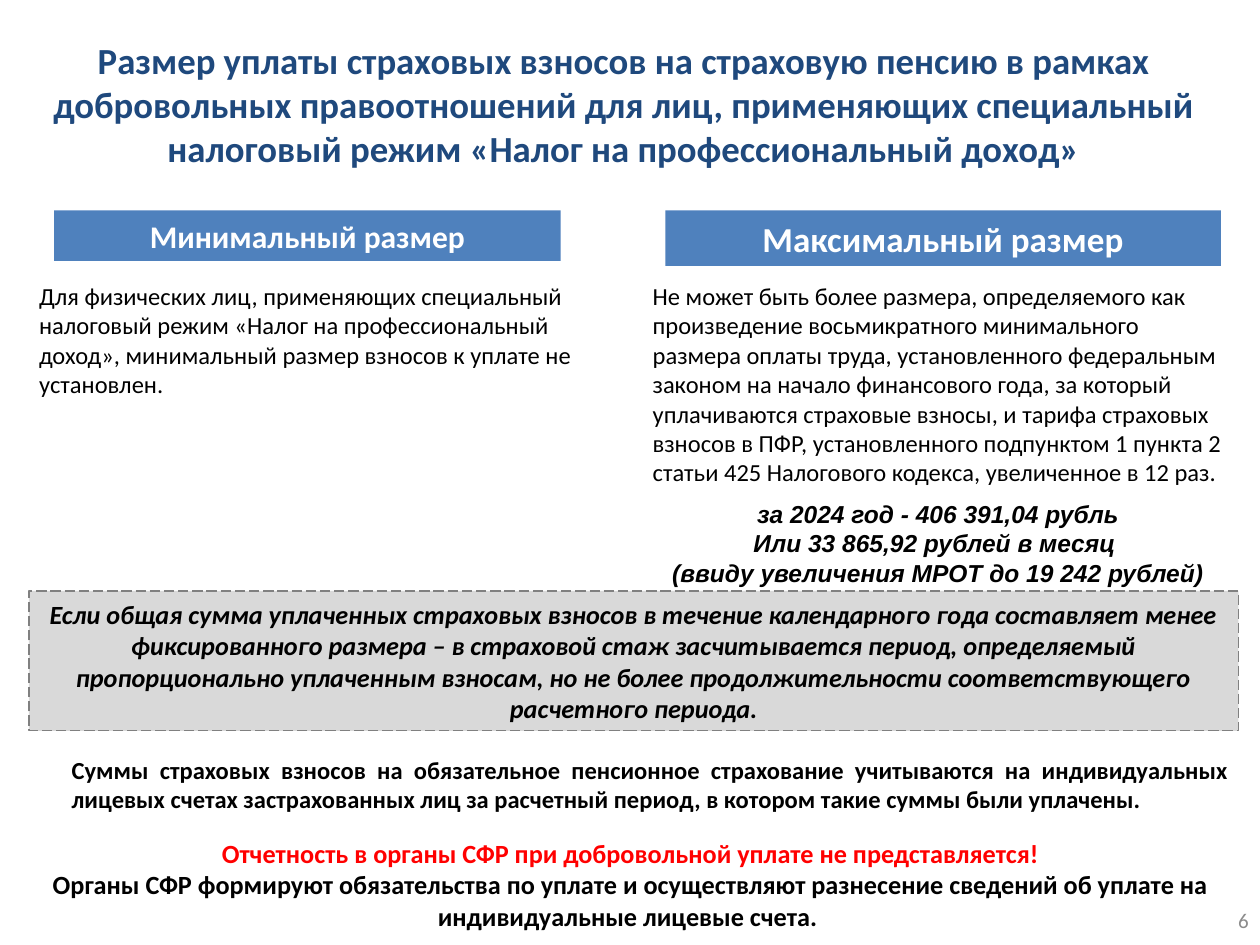
"""Builds the slide on voluntary pension contributions for self-employed people."""
from lxml import etree
from pptx import Presentation
from pptx import util as u
from pptx.dml import color
from pptx.enum import dml, shapes, text
from pptx.oxml import ns

COLUMNS, ROWS = 100, 75
ALIGN = text.PP_ALIGN
ANCHOR = text.MSO_ANCHOR
BLACK, WHITE, RED, NAVY, BLUE = "000000", "FFFFFF", "FF0000", "1F497D", "4F81BD"
LIGHT_GREY, MID_GREY, NUMBER_GREY = "D9D9D9", "808080", "8C8C8C"


def rgb(value):
    """Return the colour for a hex string."""
    return color.RGBColor.from_string(value)


def place(presentation, shape, box):
    """Put a shape at a box given in grid columns and rows."""
    column = presentation.slide_width / COLUMNS
    row = presentation.slide_height / ROWS
    left, top, width, height = box
    shape.left, shape.width = round(left * column), round(width * column)
    shape.top, shape.height = round(top * row), round(height * row)


def write(shape, lines, size, align=ALIGN.LEFT, anchor=ANCHOR.TOP,
          bold=False, italic=False, font="Calibri"):
    """Fill a shape with one paragraph for each (wording, colour) pair."""
    frame = shape.text_frame
    frame.word_wrap = True
    frame.auto_size = text.MSO_AUTO_SIZE.NONE
    frame.vertical_anchor = anchor
    for index, (wording, hex_colour) in enumerate(lines):
        paragraph = frame.add_paragraph() if index else frame.paragraphs[0]
        paragraph.alignment = align
        paragraph.space_before = u.Pt(0)
        run = paragraph.add_run()
        run.text = wording
        run.font.name, run.font.size = font, u.Pt(size)
        run.font.bold, run.font.italic = bold, italic
        run.font.color.rgb = rgb(hex_colour)


def remove_bullets(shape):
    """Turn the list paragraphs of a placeholder into plain text."""
    for paragraph in shape.text_frame.paragraphs:
        properties = paragraph._p.get_or_add_pPr()
        properties.set("marL", "0")
        properties.set("indent", "0")
        etree.SubElement(properties, ns.qn("a:buNone"))


def add_title(presentation, slide, box, wording):
    """Fill the title placeholder."""
    place(presentation, slide.shapes.title, box)
    write(slide.shapes.title, [(wording, NAVY)], 21, ALIGN.CENTER, ANCHOR.MIDDLE, bold=True)


def add_heading(presentation, shape, box, wording, size):
    """Turn a heading placeholder into a filled bar."""
    place(presentation, shape, box)
    shape.fill.solid()
    shape.fill.fore_color.rgb = rgb(BLUE)
    write(shape, [(wording, WHITE)], size, ALIGN.CENTER, ANCHOR.MIDDLE, bold=True)


def add_body(presentation, shape, box, wording):
    """Fill a body placeholder with plain text."""
    place(presentation, shape, box)
    write(shape, [(wording, BLACK)], 14)
    remove_bullets(shape)


def add_text(presentation, slide, box, lines, size, **style):
    """Add a text box."""
    shape = slide.shapes.add_textbox(0, 0, 0, 0)
    place(presentation, shape, box)
    write(shape, lines, size, **style)


def add_callout(presentation, slide, box, wording):
    """Add the grey rectangle with a dashed outline."""
    shape = slide.shapes.add_shape(shapes.MSO_SHAPE.RECTANGLE, 0, 0, 0, 0)
    place(presentation, shape, box)
    shape.shadow.inherit = False
    shape.fill.solid()
    shape.fill.fore_color.rgb = rgb(LIGHT_GREY)
    shape.line.color.rgb = rgb(MID_GREY)
    shape.line.width = u.Pt(0.75)
    shape.line.dash_style = dml.MSO_LINE.LONG_DASH
    write(shape, [(wording, BLACK)], 15, ALIGN.CENTER, ANCHOR.MIDDLE, bold=True, italic=True)


def main():
    """Build and save the slide."""
    presentation = Presentation()
    presentation.slide_width, presentation.slide_height = u.Inches(10), u.Inches(7.5)
    slide = presentation.slides.add_slide(presentation.slide_layouts.get_by_name("Comparison"))
    minimum_heading, minimum_body, maximum_heading, maximum_body = [
        slide.placeholders[index] for index in range(1, 5)]

    add_title(presentation, slide, (2.1, 1.4, 94.8, 13.7),
              "Размер уплаты страховых взносов на страховую пенсию в рамках добровольных "
              "правоотношений для лиц, применяющих специальный налоговый режим "
              "«Налог на профессиональный доход»")
    add_heading(presentation, minimum_heading, (4.3, 16.7, 40.2, 4), "Минимальный размер", 18)
    add_heading(presentation, maximum_heading, (52.8, 16.7, 44.1, 4.4), "Максимальный размер", 20)
    add_body(presentation, minimum_body, (2.1, 21.8, 47.1, 10.4),
             "Для физических лиц, применяющих специальный налоговый режим «Налог на "
             "профессиональный доход», минимальный размер взносов к уплате не установлен.")
    add_body(presentation, maximum_body, (50.8, 21.8, 47.3, 17.5),
             "Не может быть более размера, определяемого как произведение восьмикратного "
             "минимального размера оплаты труда, установленного федеральным законом на начало "
             "финансового года, за который уплачиваются страховые взносы, и тарифа страховых "
             "взносов в ПФР, установленного подпунктом 1 пункта 2 статьи 425 Налогового "
             "кодекса, увеличенное в 12 раз.")
    add_text(presentation, slide, (50.8, 39.1, 47.3, 8.1),
             [("за 2024 год - 406 391,04 рубль", BLACK),
              ("Или 33 865,92 рублей в месяц ", BLACK),
              ("(ввиду увеличения МРОТ до 19 242 рублей)", BLACK)],
             14, align=ALIGN.CENTER, bold=True, italic=True, font="Arial")
    add_callout(presentation, slide, (2.3, 46.9, 96, 11.1),
                "Если общая сумма уплаченных страховых взносов в течение календарного года "
                "составляет менее фиксированного размера – в страховой стаж засчитывается "
                "период, определяемый пропорционально уплаченным взносам, но не более "
                "продолжительности соответствующего расчетного периода.")
    add_text(presentation, slide, (4.7, 59.4, 93.8, 5.7),
             [("Суммы страховых взносов на обязательное пенсионное страхование учитываются на "
               "индивидуальных лицевых счетах застрахованных лиц за расчетный период, в котором "
               "такие суммы были уплачены.", BLACK)],
             14, align=ALIGN.JUSTIFY, bold=True)
    add_text(presentation, slide, (1.2, 65.9, 97.7, 8.6),
             [("Отчетность в органы СФР при добровольной уплате не представляется!", RED),
              ("Органы СФР формируют обязательства по уплате и осуществляют разнесение сведений "
               "об уплате на индивидуальные лицевые счета. ", BLACK)],
             15, align=ALIGN.CENTER, anchor=ANCHOR.MIDDLE, bold=True)
    add_text(presentation, slide, (76.8, 71, 23.3, 4), [("6", NUMBER_GREY)],
             12, align=ALIGN.RIGHT, anchor=ANCHOR.MIDDLE)
    presentation.save("out.pptx")


if __name__ == "__main__":
    main()
